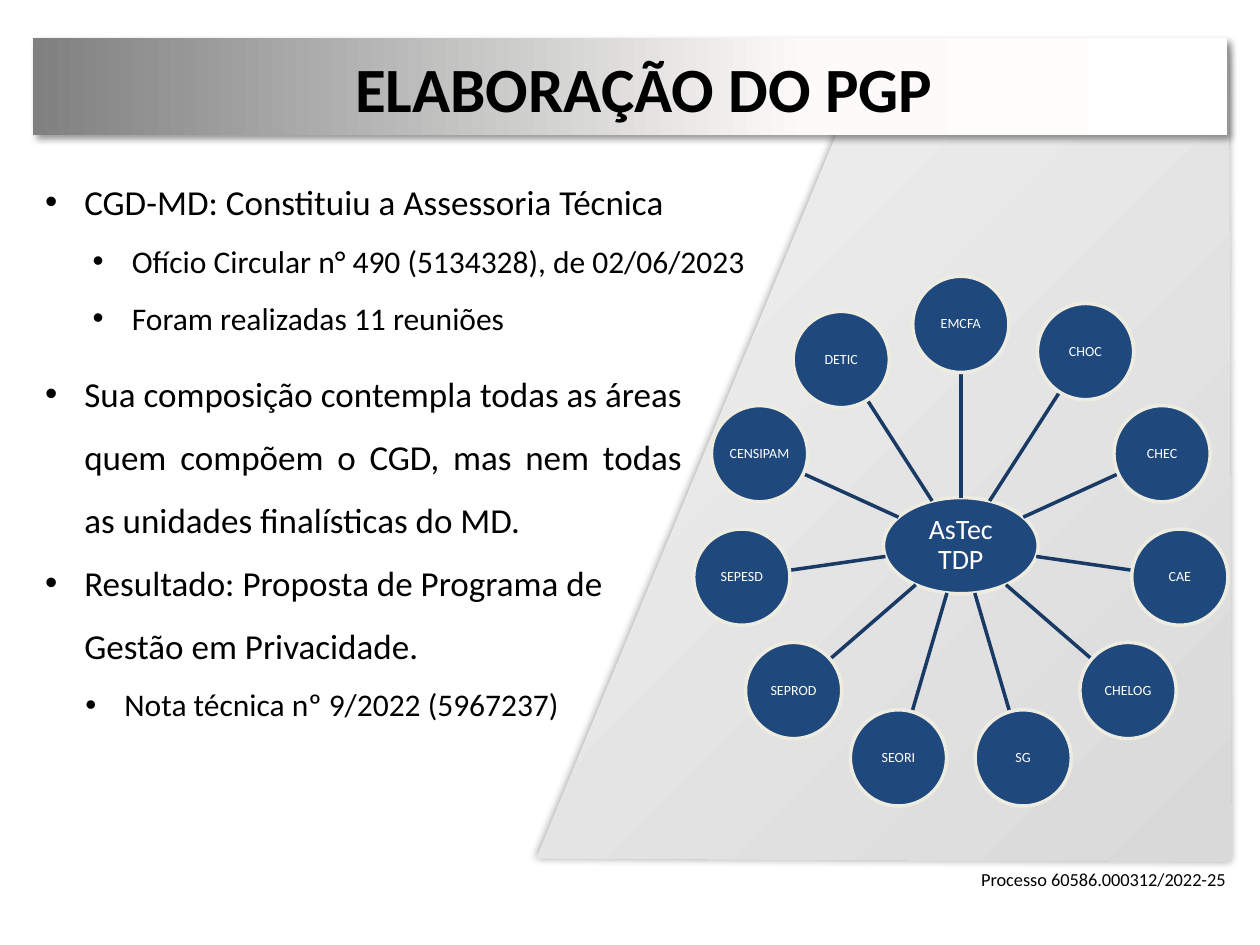
"""Build the slide on the PGP preparation, with its advisory group diagram."""
from dataclasses import dataclass
from math import cos, hypot, pi, sin

from lxml import etree
from pptx import Presentation
from pptx.dml.color import RGBColor
from pptx.enum.shapes import MSO_CONNECTOR, MSO_SHAPE
from pptx.enum.text import MSO_ANCHOR, PP_ALIGN
from pptx.oxml import parse_xml
from pptx.oxml.ns import nsdecls, qn
from pptx.util import Cm, Pt

OVAL = MSO_SHAPE.OVAL
RECTANGLE = MSO_SHAPE.RECTANGLE
STRAIGHT = MSO_CONNECTOR.STRAIGHT
MIDDLE = MSO_ANCHOR.MIDDLE
LEFT, CENTER, JUSTIFY = PP_ALIGN.LEFT, PP_ALIGN.CENTER, PP_ALIGN.JUSTIFY

BLACK = RGBColor(0x00, 0x00, 0x00)
WHITE = RGBColor(0xFF, 0xFF, 0xFF)
NAVY = RGBColor(0x1F, 0x49, 0x7D)
SPOKE = RGBColor(0x19, 0x3A, 0x64)
CREAM = RGBColor(0xEE, 0xEC, 0xE1)
PANEL_LIGHT = RGBColor(0xF2, 0xF2, 0xF2)
PANEL_DARK = RGBColor(0xD9, 0xD9, 0xD9)
BANNER_GRAY = RGBColor(0x80, 0x80, 0x80)
BANNER_PALE = RGBColor(0xFC, 0xFB, 0xF9)

FONT = "Calibri"
HANGING = 0.79
HUB_X, HUB_Y = 19.37, 11.0
HUB_RADIUS_X, HUB_RADIUS_Y = 1.56, 0.97
NODE_RADIUS = 0.97
RING = 4.46


@dataclass(frozen=True)
class Bullet:
    text: str
    size: float = 20
    margin: float = HANGING
    align: PP_ALIGN = LEFT


@dataclass(frozen=True)
class Node:
    name: str
    distance: float = RING


@dataclass(frozen=True)
class Shadow:
    blur: float
    distance: float
    angle: int


FIRST_BULLETS = (
    Bullet("CGD-MD: Constituiu a Assessoria Técnica"),
    Bullet("Ofício Circular n° 490 (5134328), de 02/06/2023", 18, 1.75),
    Bullet("Foram realizadas 11 reuniões", 18, 1.75),
)
SECOND_BULLETS = (
    Bullet("Sua composição contempla todas as áreas quem compõem o CGD, "
           "mas nem todas as unidades finalísticas do MD.", align=JUSTIFY),
    Bullet("Resultado: Proposta de Programa de\vGestão em Privacidade."),
    Bullet("Nota técnica nº 9/2022 (5967237)", 18, 1.6),
)
NODES = (
    Node("EMCFA"), Node("CHOC", 4.65), Node("CHEC"), Node("CAE"),
    Node("CHELOG"), Node("SG"), Node("SEORI"), Node("SEPROD"),
    Node("SEPESD"), Node("CENSIPAM"), Node("DETIC"),
)


def set_font(paragraph, size: float, color: RGBColor, bold: bool = False) -> None:
    font = paragraph.font
    font.name, font.size, font.bold = FONT, Pt(size), bold
    font.color.rgb = color


def style_surface(shape, stops: tuple, angle: int, shadow: Shadow) -> None:
    """Give a borderless shape a linear gradient and an outer shadow."""
    shape.line.fill.background()
    stop_xml = "".join(
        f'<a:gs pos="{position * 1000}"><a:srgbClr val="{color}"/></a:gs>'
        for position, color in stops)
    outline = shape._element.spPr.find(qn("a:ln"))
    outline.addprevious(parse_xml(
        f'<a:gradFill {nsdecls("a")} rotWithShape="1"><a:gsLst>{stop_xml}</a:gsLst>'
        f'<a:lin ang="{angle * 60000}" scaled="0"/></a:gradFill>'))
    outline.addnext(parse_xml(
        f'<a:effectLst {nsdecls("a")}><a:outerShdw blurRad="{Pt(shadow.blur)}" '
        f'dist="{Pt(shadow.distance)}" dir="{shadow.angle * 60000}" algn="tl" '
        f'rotWithShape="0"><a:srgbClr val="{BLACK}"><a:alpha val="40000"/>'
        f'</a:srgbClr></a:outerShdw></a:effectLst>'))


def add_panel(slide) -> None:
    corners = [(Cm(x), Cm(y)) for x, y in
               ((10.82, 17.3), (17.58, 0.99), (24.77, 1.02), (24.82, 17.37))]
    builder = slide.shapes.build_freeform(*corners[0])
    builder.add_line_segments(corners[1:], close=True)
    style_surface(builder.convert_to_shape(),
                  ((0, PANEL_LIGHT), (100, PANEL_DARK)), 45, Shadow(5, 0, 0))


def add_text_box(slide, left: float, top: float, width: float, height: float):
    text_box = slide.shapes.add_textbox(Cm(left), Cm(top), Cm(width), Cm(height))
    text_box.text_frame.word_wrap = True
    return text_box.text_frame


def add_title(slide) -> None:
    banner = slide.shapes.add_shape(RECTANGLE, Cm(0.66), Cm(0.76), Cm(24.08), Cm(1.96))
    style_surface(banner, ((0, BANNER_GRAY), (65, BANNER_PALE), (100, WHITE)),
                  0, Shadow(4, 3, 45))
    frame = add_text_box(slide, 0.66, 0.76, 24.08, 1.7)
    frame.vertical_anchor = MIDDLE
    paragraph = frame.paragraphs[0]
    paragraph.text = "ELABORAÇÃO DO PGP"
    paragraph.alignment = CENTER
    paragraph.line_spacing = 1.2
    paragraph._p.get_or_add_pPr().set("indent", str(Cm(0.56)))
    set_font(paragraph, 36, BLACK, bold=True)


def add_bullets(slide, bullets: tuple[Bullet, ...], top: float,
                width: float, height: float) -> None:
    frame = add_text_box(slide, 0.66, top, width, height)
    for index, bullet in enumerate(bullets):
        paragraph = frame.add_paragraph() if index else frame.paragraphs[0]
        paragraph.text = bullet.text
        paragraph.alignment = bullet.align
        paragraph.line_spacing = 1.5
        properties = paragraph._p.get_or_add_pPr()
        properties.set("marL", str(Cm(bullet.margin)))
        properties.set("indent", str(-Cm(HANGING)))
        etree.SubElement(properties, qn("a:buFont"), typeface="Arial")
        etree.SubElement(properties, qn("a:buChar"), char="•")
        set_font(paragraph, bullet.size, BLACK)


def add_disc(slide, x: float, y: float, radius_x: float, radius_y: float,
             label: str, size: float) -> None:
    disc = slide.shapes.add_shape(OVAL, Cm(x - radius_x), Cm(y - radius_y),
                                  Cm(2 * radius_x), Cm(2 * radius_y))
    disc.shadow.inherit = False
    disc.fill.solid()
    disc.fill.fore_color.rgb = NAVY
    disc.line.color.rgb = CREAM
    disc.line.width = Pt(2)
    frame = disc.text_frame
    frame.word_wrap = True
    frame.vertical_anchor = MIDDLE
    frame.margin_left = frame.margin_right = Cm(0.03)
    frame.margin_top = frame.margin_bottom = Cm(0.03)
    paragraph = frame.paragraphs[0]
    paragraph.text = label
    paragraph.alignment = CENTER
    paragraph.line_spacing = 0.9
    set_font(paragraph, size, WHITE)


def add_node(slide, node: Node, angle: float) -> None:
    """Draw a node and its spoke, at an angle clockwise from the top."""
    across, down = sin(angle), -cos(angle)
    start = 1 / hypot(across / HUB_RADIUS_X, down / HUB_RADIUS_Y)
    end = node.distance - NODE_RADIUS
    spoke = slide.shapes.add_connector(
        STRAIGHT, Cm(HUB_X + start * across), Cm(HUB_Y + start * down),
        Cm(HUB_X + end * across), Cm(HUB_Y + end * down))
    spoke.line.color.rgb = SPOKE
    spoke.line.width = Pt(2)
    etree.SubElement(spoke._element.spPr, qn("a:effectLst"))
    add_disc(slide, HUB_X + node.distance * across, HUB_Y + node.distance * down,
             NODE_RADIUS, NODE_RADIUS, node.name, 8)


def add_footer(slide) -> None:
    paragraph = add_text_box(slide, 19.53, 17.37, 6.05, 0.71).paragraphs[0]
    paragraph.text = "Processo 60586.000312/2022-25"
    set_font(paragraph, 10.5, BLACK)


def main() -> None:
    presentation = Presentation()
    presentation.slide_width, presentation.slide_height = Cm(25.4), Cm(19.05)
    slide = presentation.slides.add_slide(presentation.slide_layouts[6])
    add_panel(slide)
    add_title(slide)
    add_bullets(slide, FIRST_BULLETS, 3.1, 14.78, 3.84)
    add_disc(slide, HUB_X, HUB_Y, HUB_RADIUS_X, HUB_RADIUS_Y, "AsTec TDP", 16)
    for index, node in enumerate(NODES):
        add_node(slide, node, 2 * pi * index / len(NODES))
    add_footer(slide)
    add_bullets(slide, SECOND_BULLETS, 6.96, 13.34, 8.97)
    presentation.save("out.pptx")


if __name__ == "__main__":
    main()
